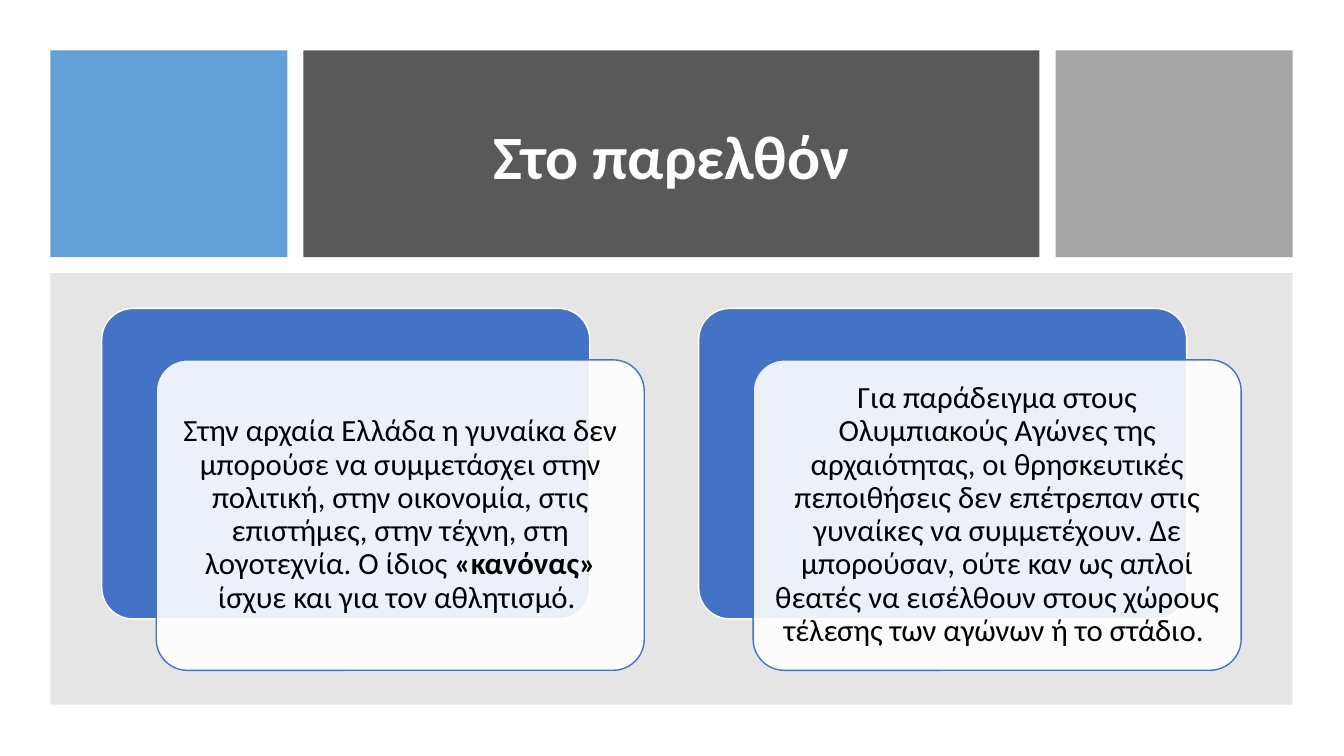
"""Build the slide about women in the past: a title band above two layered text cards."""
from lxml import etree
from pptx import Presentation
from pptx.dml.color import RGBColor
from pptx.enum.shapes import MSO_SHAPE
from pptx.enum.text import MSO_ANCHOR, PP_ALIGN
from pptx.oxml.ns import qn
from pptx.util import Inches, Pt

RECTANGLE = MSO_SHAPE.RECTANGLE
ROUNDED = MSO_SHAPE.ROUNDED_RECTANGLE
MIDDLE = MSO_ANCHOR.MIDDLE
CENTER = PP_ALIGN.CENTER


def add_panel(kind, box, fill, opacity=100, line=None):
    """Add a filled shape; opacity is a percentage."""
    shape = slide.shapes.add_shape(kind, *[Inches(length) for length in box])
    shape.shadow.inherit = False
    shape.fill.solid()
    shape.fill.fore_color.rgb = RGBColor.from_string(fill)
    if opacity < 100:
        color = shape.fill._xPr.find(".//" + qn("a:srgbClr"))
        etree.SubElement(color, qn("a:alpha"), val=str(opacity * 1000))
    if line:
        shape.line.color.rgb = RGBColor.from_string(line)
        shape.line.width = Pt(1)
    else:
        shape.line.fill.background()
    if kind == ROUNDED:
        shape.adjustments[0] = 0.1
    return shape


def write_text(shape, runs, size, color, inset):
    """Write one centred paragraph from (text, bold) runs."""
    frame = shape.text_frame
    frame.word_wrap = True
    frame.vertical_anchor = MIDDLE
    frame.margin_left = frame.margin_right = Inches(inset)
    frame.margin_top = frame.margin_bottom = Inches(inset)
    paragraph = frame.paragraphs[0]
    paragraph.alignment = CENTER
    paragraph.line_spacing = 0.9
    for text, bold in runs:
        run = paragraph.add_run()
        run.text = text
        run.font.name = "Calibri"
        run.font.size = Pt(size)
        run.font.bold = bold
        run.font.color.rgb = RGBColor.from_string(color)


presentation = Presentation()
presentation.slide_width = Inches(13.33)
presentation.slide_height = Inches(7.5)
slide = presentation.slides.add_slide(presentation.slide_layouts[6])

MARGIN, GAP = 0.5, 0.16
BAND_HEIGHT = 2.05
band_left = MARGIN
for width, fill, opacity in [(2.35, "5B9BD5", 95), (7.3, "595959", 100), (2.35, "A5A5A5", 100)]:
    add_panel(RECTANGLE, (band_left, MARGIN, width, BAND_HEIGHT), fill, opacity)
    band_left += width + GAP
content_width = band_left - GAP - MARGIN
add_panel(RECTANGLE, (MARGIN, MARGIN + BAND_HEIGHT + GAP, content_width, 4.28), "808080", 20)

title = slide.shapes.add_textbox(Inches(3.33), Inches(0.8), Inches(6.66), Inches(1.56))
write_text(title, [("Στο παρελθόν", True)], 44, "FFFFFF", 0.05)

CARD_LEFT, CARD_TOP, CARD_PITCH = 1.01, 3.06, 5.92
CARD_WIDTH, CARD_HEIGHT = 4.84, 3.08
OFFSET_X, OFFSET_Y = 0.54, 0.51
cards = [
    [
        ("Στην αρχαία Ελλάδα η γυναίκα δεν μπορούσε να συμμετάσχει στην πολιτική, "
         "στην οικονομία, στις επιστήμες, στην τέχνη, στη λογοτεχνία. Ο ίδιος ", False),
        ("«κανόνας»", True),
        (" ίσχυε και για τον αθλητισμό. ", False),
    ],
    [
        ("Για παράδειγμα στους Ολυμπιακούς Αγώνες της αρχαιότητας, οι θρησκευτικές "
         "πεποιθήσεις δεν επέτρεπαν στις γυναίκες να συμμετέχουν. Δε μπορούσαν, ούτε καν "
         "ως απλοί θεατές να εισέλθουν στους χώρους τέλεσης των αγώνων ή το στάδιο. ", False),
    ],
]
for column, runs in enumerate(cards):
    left = CARD_LEFT + column * CARD_PITCH
    add_panel(ROUNDED, (left, CARD_TOP, CARD_WIDTH, CARD_HEIGHT), "4472C4", line="FFFFFF")
    front_box = (left + OFFSET_X, CARD_TOP + OFFSET_Y, CARD_WIDTH, CARD_HEIGHT)
    front = add_panel(ROUNDED, front_box, "FFFFFF", 90, "4472C4")
    write_text(front, runs, 22, "000000", 0.09)

presentation.save("out.pptx")
